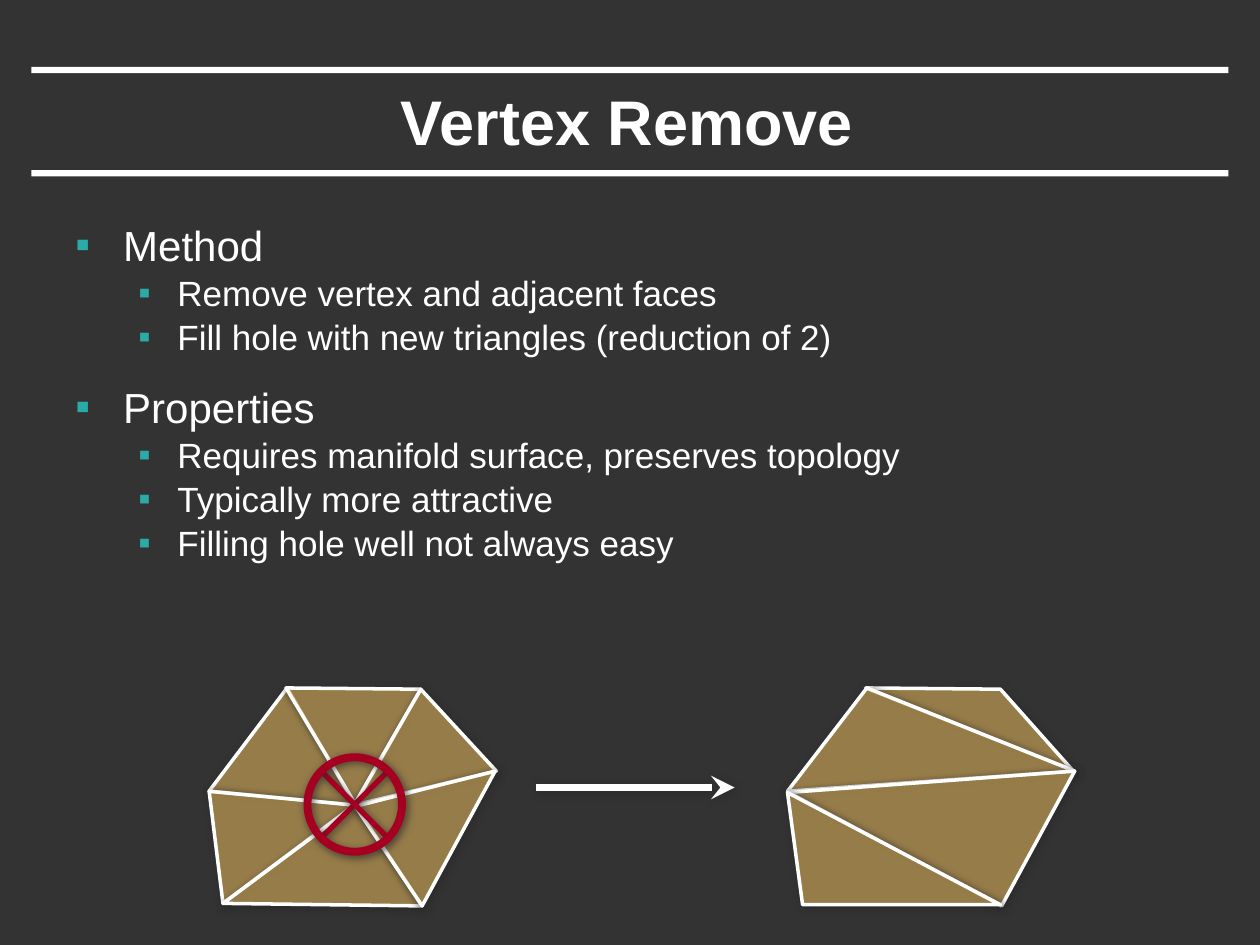
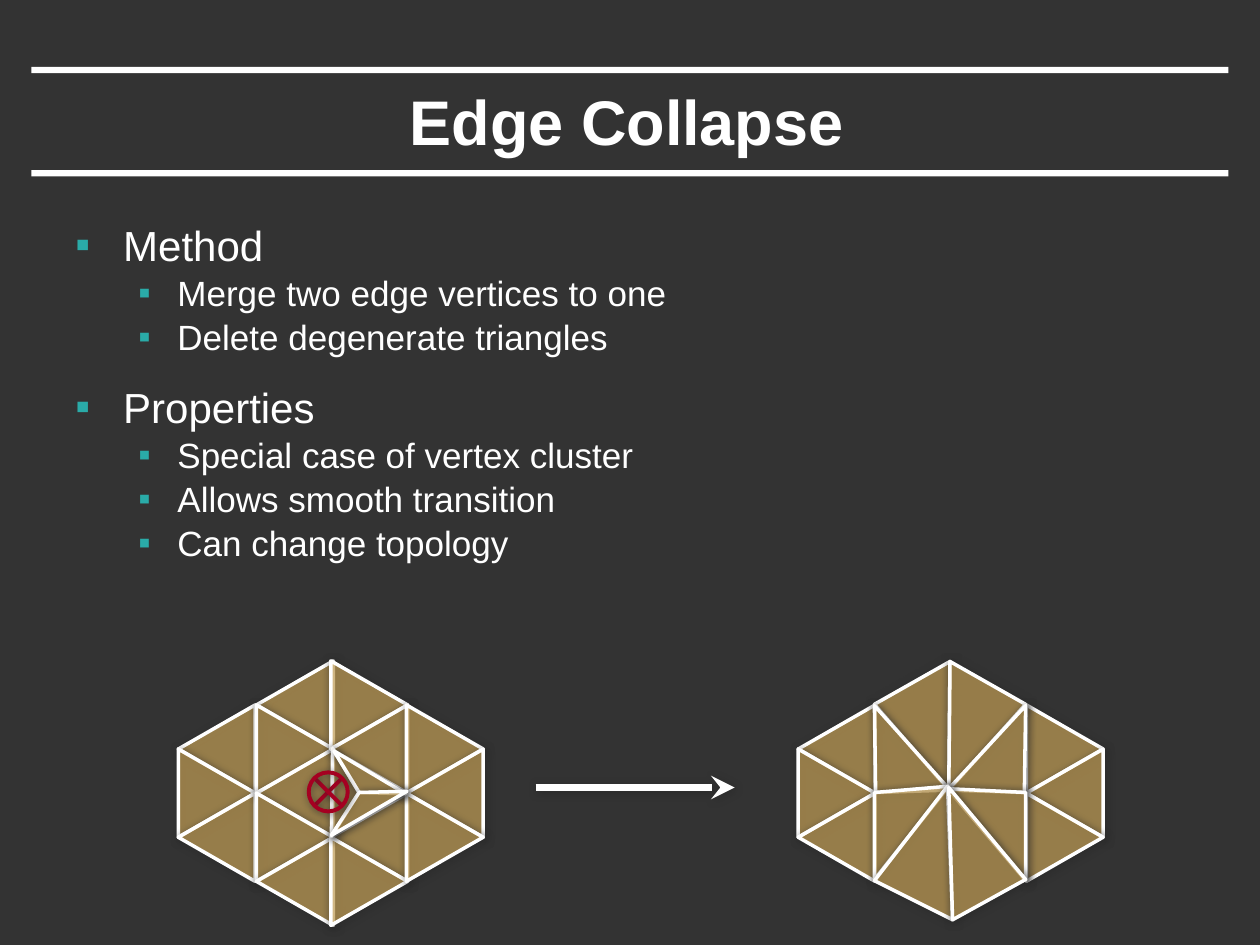
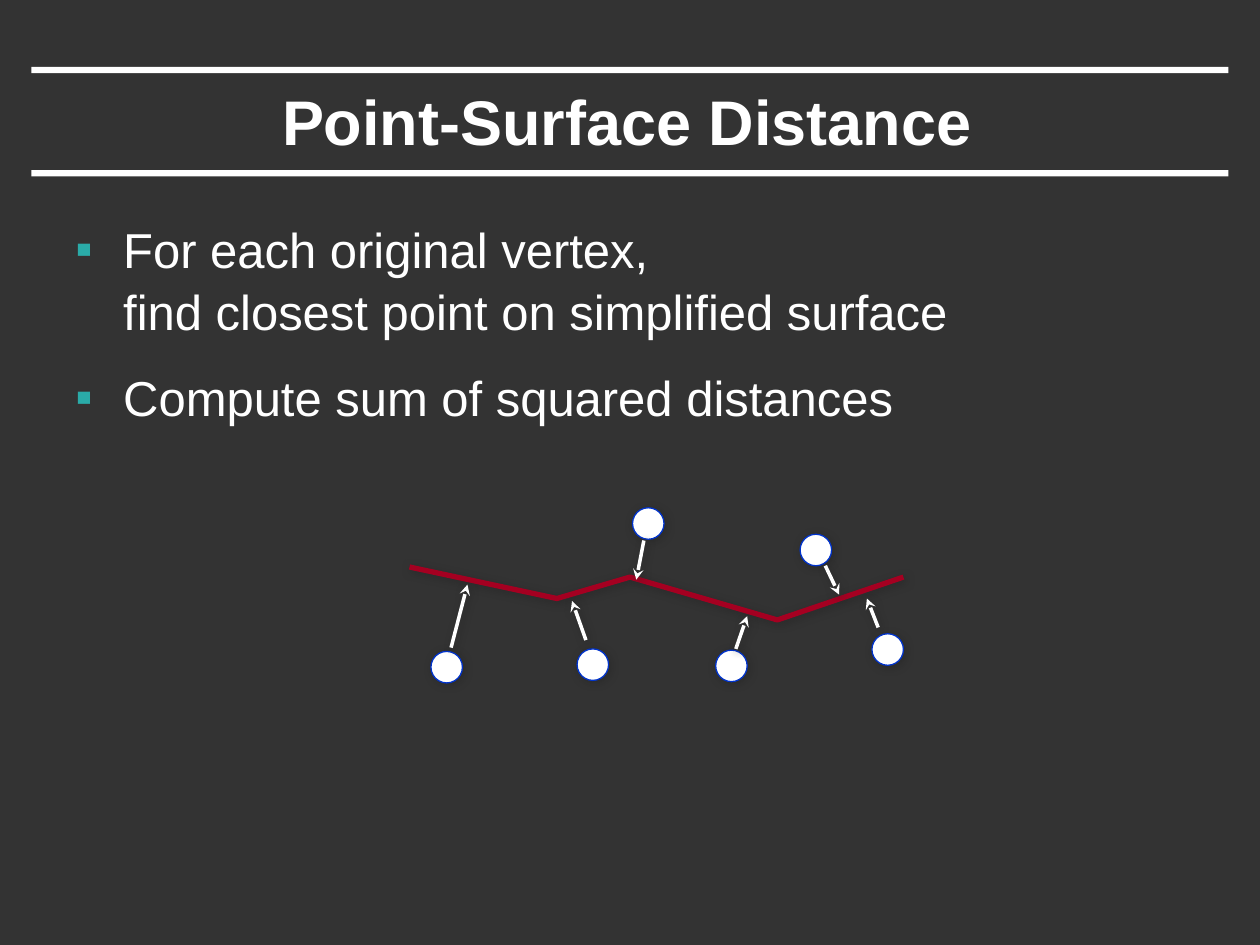
from lxml.etree import SubElement
from pptx import Presentation
from pptx.dml.color import RGBColor
from pptx.enum.shapes import MSO_CONNECTOR, MSO_SHAPE
from pptx.enum.text import MSO_ANCHOR, PP_ALIGN
from pptx.oxml.ns import qn
from pptx.util import Pt

PX = 9144  # 100 px to the inch
FONT = "Arial"
COLORS = {
    "background": "333333",
    "white": "FFFFFF",
    "bullet": "2AABA8",
    "face": "FFCC66",
    "red": "A50021",
    "blue": "0033CC",
    "shadow": "292929",
}
RGB = {name: RGBColor.from_string(value) for name, value in COLORS.items()}


def style(shape, line, width, shadow_alpha=75):
    """Set the outline and the soft shadow that all diagram parts share."""
    shape.line.color.rgb = RGB[line]
    shape.line.width = Pt(width)
    effects = SubElement(shape.element.spPr, qn("a:effectLst"))
    shadow = SubElement(effects, qn("a:outerShdw"), blurRad=str(Pt(5)), dist=str(Pt(1.4)),
                        dir=str(45 * 60000), algn="ctr", rotWithShape="0")
    color = SubElement(shadow, qn("a:srgbClr"), val=COLORS["shadow"])
    SubElement(color, qn("a:alpha"), val=str(shadow_alpha * 1000))


def add_line(shapes, start, end, color, width, arrow=False):
    points = [value * PX for value in (*start, *end)]
    connector = shapes.add_connector(MSO_CONNECTOR.STRAIGHT, *points)
    style(connector, color, width)
    if arrow:
        SubElement(connector.element.spPr.find(qn("a:ln")), qn("a:tailEnd"), type="stealth")


presentation = Presentation()
presentation.slide_width = 1000 * PX
presentation.slide_height = 750 * PX
background = presentation.slide_master.background.fill
background.solid()
background.fore_color.rgb = RGB["background"]

# Titles and bullets: (level, size, text)
outlines = [
    ("Vertex Remove", [
        (0, 24, "Method"),
        (1, 20, "Remove vertex and adjacent faces"),
        (1, 20, "Fill hole with new triangles (reduction of 2)"),
        (0, 24, "Properties"),
        (1, 20, "Requires manifold surface, preserves topology"),
        (1, 20, "Typically more attractive"),
        (1, 20, "Filling hole well not always easy"),
    ]),
    ("Edge Collapse", [
        (0, 24, "Method"),
        (1, 20, "Merge two edge vertices to one"),
        (1, 20, "Delete degenerate triangles"),
        (0, 24, "Properties"),
        (1, 20, "Special case of vertex cluster"),
        (1, 20, "Allows smooth transition"),
        (1, 20, "Can change topology"),
    ]),
    ("Point-Surface Distance", [
        (0, 28, "For each original vertex,\vfind closest point on simplified surface"),
        (0, 28, "Compute sum of squared distances"),
    ]),
]
indents = [(38, -38), (81, -31)]

slides = []
for title_text, bullets in outlines:
    slide = presentation.slides.add_slide(presentation.slide_layouts[5])
    slides.append(slide)
    for band_top in (135, 53):
        band = slide.shapes.add_shape(MSO_SHAPE.RECTANGLE, 25 * PX, band_top * PX, 950 * PX, 5 * PX)
        band.fill.solid()
        band.fill.fore_color.rgb = RGB["white"]
        band.line.fill.background()
        band.shadow.inherit = False

    title = slide.shapes.title
    title.left, title.top, title.width, title.height = 74 * PX, 58 * PX, 847 * PX, 75 * PX
    title.text_frame.text = title_text
    title.text_frame.vertical_anchor = MSO_ANCHOR.MIDDLE
    paragraph = title.text_frame.paragraphs[0]
    paragraph.alignment = PP_ALIGN.CENTER
    paragraph.font.name = FONT
    paragraph.font.size = Pt(36)
    paragraph.font.bold = True
    paragraph.font.color.rgb = RGB["white"]

    body = slide.shapes.add_textbox(50 * PX, 167 * PX, 900 * PX, 550 * PX).text_frame
    body.word_wrap = True
    for index, (level, size, text) in enumerate(bullets):
        paragraph = body.add_paragraph() if index else body.paragraphs[0]
        paragraph.text = text
        paragraph.level = level
        paragraph.line_spacing = 1.05
        paragraph.space_before = Pt(0 if level else size / 2)
        properties = paragraph._p.get_or_add_pPr()
        margin, indent = indents[level]
        properties.set("marL", str(margin * PX))
        properties.set("indent", str(indent * PX))
        bullet_color = SubElement(properties, qn("a:buClr"))
        SubElement(bullet_color, qn("a:srgbClr"), val=COLORS["bullet"])
        SubElement(properties, qn("a:buFont"), typeface=FONT)
        SubElement(properties, qn("a:buChar"), char="▪")
        paragraph.font.name = FONT
        paragraph.font.size = Pt(size)
        paragraph.font.color.rgb = RGB["white"]

vertex_slide, edge_slide, distance_slide = slides
faces = []  # (shape, shadow alpha)

# Regular triangles alternate between pointing left and right over the grid
column_rows = [range(1, 4), range(5), (0, 1, 3, 4), range(1, 4)]
before_collapse = list(zip(range(4), (137, 199, 258, 318), column_rows))
after_collapse = [(0, 629, range(1, 4)), (3, 810, range(1, 4))]
for column, left, rows in before_collapse + after_collapse:
    for row in rows:
        triangle = edge_slide.shapes.add_shape(
            MSO_SHAPE.ISOSCELES_TRIANGLE, left * PX, (529 + 35 * row) * PX, 70 * PX, 61 * PX)
        triangle.rotation = 270 if (column + row) % 2 else 90
        faces.append((triangle, 75))

irregular_faces = [
    (vertex_slide, [
        # Fan around the removed vertex
        [(166, 628), (282, 639), (228, 546)],
        [(227, 546), (282, 638), (334, 547)],
        [(281, 639), (394, 612), (334, 547)],
        [(177, 717), (281, 639), (166, 628)],
        [(335, 719), (282, 639), (177, 717)],
        [(393, 612), (282, 640), (335, 719)],
        # Filled hole
        [(687, 546), (851, 611), (794, 547)],
        [(625, 628), (853, 612), (688, 546)],
        [(853, 612), (626, 629), (795, 719)],
        [(637, 718), (794, 718), (625, 629)],
    ]),
    (edge_slide, [
        # Around the short edge
        [(264, 594), (263, 664), (285, 629)],
        [(265, 596), (285, 629), (322, 630)],
        [(263, 663), (323, 628), (285, 629)],
        # Around the merged vertex
        [(694, 559), (753, 627), (754, 525)],
        [(694, 560), (695, 629), (754, 627)],
        [(814, 559), (753, 627), (754, 525)],
        [(814, 560), (813, 629), (752, 627)],
        [(694, 698), (694, 629), (753, 624)],
        [(814, 699), (814, 629), (752, 626)],
        [(694, 699), (752, 624), (756, 730)],
        [(814, 698), (753, 625), (756, 730)],
    ]),
]
for slide, outline_list in irregular_faces:
    for start, *corners in outline_list:
        builder = slide.shapes.build_freeform(*start, scale=PX)
        builder.add_line_segments(corners, close=True)
        faces.append((builder.convert_to_shape(), 100))

for face, shadow_alpha in faces:
    face.fill.solid()
    face.fill.fore_color.rgb = RGB["face"]
    face_color = face.element.spPr.find(qn("a:solidFill"))[0]
    SubElement(face_color, qn("a:alpha"), val="50000")
    style(face, "white", 2, shadow_alpha)

# Crossed-out circles and the arrows between the two states
cancel_marks = [
    (vertex_slide, 244, 601, 75, 12, 3, 4.5),
    (edge_slide, 245, 613, 31, 5, 2.25, 2.25),
]
for slide, left, top, size, inset, cross_width, ring_width in cancel_marks:
    mark = slide.shapes.add_group_shape().shapes
    near, far = inset, size - inset
    add_line(mark, (left + far, top + near), (left + near, top + far), "red", cross_width)
    add_line(mark, (left + near, top + near), (left + far, top + far), "red", cross_width)
    ring = mark.add_shape(MSO_SHAPE.OVAL, left * PX, top * PX, size * PX, size * PX)
    ring.fill.background()
    style(ring, "red", ring_width)
    add_line(slide.shapes, (425, 625), (583, 625), "white", 4.5, arrow=True)

# Vertices, the simplified surface and the distances between them
for left, top in [(342, 517), (458, 515), (502, 403), (635, 424), (692, 503), (568, 516)]:
    vertex = distance_slide.shapes.add_shape(MSO_SHAPE.OVAL, left * PX, top * PX, 25 * PX, 25 * PX)
    vertex.fill.solid()
    vertex.fill.fore_color.rgb = RGB["white"]
    style(vertex, "blue", 0.75)

builder = distance_slide.shapes.build_freeform(325, 450, scale=PX)
builder.add_line_segments([(442, 475), (500, 458), (617, 492), (717, 458)], close=False)
surface = builder.convert_to_shape()
surface.fill.background()
style(surface, "red", 3, 100)

distances = [
    ((358, 514), (371, 464)),
    ((465, 508), (454, 477)),
    ((511, 429), (505, 460)),
    ((655, 449), (666, 472)),
    ((697, 498), (688, 475)),
    ((584, 515), (593, 489)),
]
for start, end in distances:
    add_line(distance_slide.shapes, start, end, "white", 2, arrow=True)

presentation.save("out.pptx")
